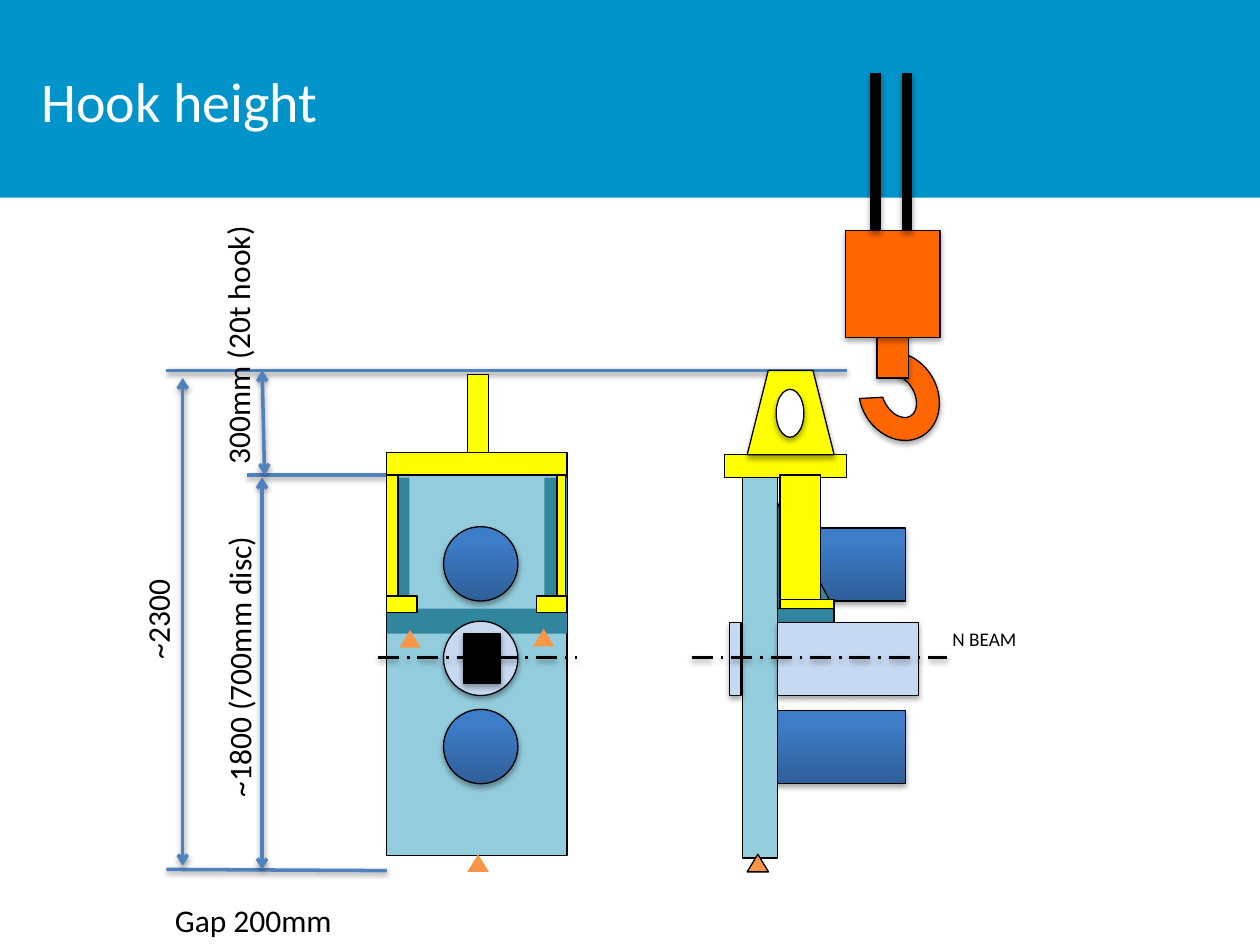
"""Build the hook height slide with front and side views of the lifting frame."""
from dataclasses import dataclass
from typing import Optional

from lxml import etree
from pptx import Presentation
from pptx import util as u
from pptx.dml.color import RGBColor
from pptx.enum import dml, shapes, text
from pptx.oxml.ns import qn

BLACK = RGBColor(0x00, 0x00, 0x00)
WHITE = RGBColor(0xFF, 0xFF, 0xFF)
BANNER = RGBColor(0x00, 0x94, 0xCA)
PLATE = RGBColor(0x93, 0xCD, 0xDD)
TEAL = RGBColor(0x31, 0x85, 0x9C)
YELLOW = RGBColor(0xFF, 0xFF, 0x00)
ORANGE = RGBColor(0xFF, 0x66, 0x00)
MARKER = RGBColor(0xF7, 0x96, 0x46)
PALE = RGBColor(0xC6, 0xD9, 0xF1)
MOTOR = RGBColor(0x3D, 0x7C, 0xC7)
MOTOR_DARK = RGBColor(0x2F, 0x5F, 0x99)
DIMENSION = RGBColor(0x4F, 0x81, 0xBD)
FONT = "Calibri"

KIND = shapes.MSO_SHAPE
RECT, OVAL, TRIANGLE = KIND.RECTANGLE, KIND.OVAL, KIND.ISOSCELES_TRIANGLE


@dataclass
class Part:
    left: float
    top: float
    width: float
    height: float
    fill: RGBColor
    kind: shapes.MSO_SHAPE = RECT
    outlined: bool = True
    shadow: bool = False
    rotation: float = 0
    adjustments: tuple = ()


@dataclass
class Stroke:
    x1: float
    y1: float
    x2: float
    y2: float
    color: RGBColor = DIMENSION
    weight: float = 2
    arrows: bool = False
    dash: Optional[dml.MSO_LINE] = None


@dataclass
class Label:
    words: str
    left: float
    top: float
    width: float
    height: float = 0.4
    size: float = 18
    rotation: float = 0


def inch(value: float) -> u.Length:
    return u.Cm(value * 2.54)


def add_shadow(effects, alpha: int, distance: int) -> None:
    outer = etree.SubElement(effects, qn("a:outerShdw"), blurRad="40000", dist=str(distance),
                             dir="5400000", rotWithShape="0")
    tint = etree.SubElement(outer, qn("a:srgbClr"), val=str(BLACK))
    etree.SubElement(tint, qn("a:alpha"), val=str(alpha * 1000))


def draw_part(page, part: Part):
    shape = page.shapes.add_shape(part.kind, inch(part.left), inch(part.top),
                                  inch(part.width), inch(part.height))
    shape.rotation = part.rotation
    for index, value in enumerate(part.adjustments):
        shape.adjustments[index] = value
    if part.fill == MOTOR:
        shape.fill.gradient()
        shape.fill.gradient_angle = 90
        stops = shape.fill.gradient_stops
        for stop, color, position in zip(stops, (MOTOR_DARK, MOTOR), (0, 0.8)):
            stop.color.rgb = color
            stop.position = position
    else:
        shape.fill.solid()
        shape.fill.fore_color.rgb = part.fill
    if part.outlined:
        shape.line.color.rgb = BLACK
        shape.line.width = u.Pt(0.75)
    else:
        shape.line.fill.background()
    shape.shadow.inherit = False
    if part.shadow:
        add_shadow(shape._element.spPr.find(qn("a:effectLst")), 35, 23000)
    return shape


def draw_stroke(page, stroke: Stroke) -> None:
    line = page.shapes.add_connector(shapes.MSO_CONNECTOR.STRAIGHT, inch(stroke.x1),
                                     inch(stroke.y1), inch(stroke.x2), inch(stroke.y2))
    line.line.color.rgb = stroke.color
    line.line.width = u.Pt(stroke.weight)
    if stroke.dash:
        line.line.dash_style = stroke.dash
    properties = line._element.spPr
    if stroke.arrows:
        for end in ("a:headEnd", "a:tailEnd"):
            etree.SubElement(properties.find(qn("a:ln")), qn(end), type="arrow")
    add_shadow(etree.SubElement(properties, qn("a:effectLst")), 38, 20000)


def write(para, words: str, size: float, color: RGBColor) -> None:
    span = para.add_run()
    span.text = words
    span.font.name = FONT
    span.font.size = u.Pt(size)
    span.font.color.rgb = color


def draw_label(page, label: Label) -> None:
    box = page.shapes.add_textbox(inch(label.left), inch(label.top),
                                  inch(label.width), inch(label.height))
    box.rotation = label.rotation
    box.text_frame.word_wrap = False
    box.text_frame.auto_size = text.MSO_AUTO_SIZE.SHAPE_TO_FIT_TEXT
    write(box.text_frame.paragraphs[0], label.words, label.size, BLACK)


def draw_title(page, words: str) -> None:
    title = page.shapes.title
    title.left, title.top, title.width, title.height = map(inch, (0.23, 0.17, 5.52, 1.25))
    title.text_frame.vertical_anchor = text.MSO_ANCHOR.MIDDLE
    para = title.text_frame.paragraphs[0]
    para.alignment = text.PP_ALIGN.LEFT
    write(para, words, 32, WHITE)


DIMENSIONS = [
    Stroke(3.07, 3.77, 1.96, 3.77),
    Stroke(3.07, 6.91, 1.32, 6.9),
    Stroke(6.72, 2.94, 1.32, 2.94),
    Stroke(2.08, 6.9, 2.08, 3.79, arrows=True),
    Stroke(1.45, 6.87, 1.45, 3, arrows=True),
    Stroke(2.1, 3.77, 2.08, 2.94, arrows=True),
]
FRONT_VIEW = [
    Part(3.07, 3.77, 1.43, 3.02, PLATE),
    *[Part(3.52, top, 0.59, 0.59, MOTOR, OVAL, shadow=True) for top in (4.18, 5.63)],
    Part(3.07, 4.83, 1.43, 0.2, TEAL, outlined=False),
    *[Part(left, 3.79, 0.18, 1.05, TEAL, outlined=False) for left in (3.07, 4.32)],
    *[Part(left, top, 0.17, 0.14, MARKER, TRIANGLE, outlined=False)
      for left, top in ((3.71, 6.78), (3.17, 5), (4.23, 4.99))],
    Part(3.07, 3.59, 1.43, 0.18, YELLOW),
    Part(4.42, 3.77, 0.07, 0.96, YELLOW),
    Part(3.07, 3.77, 0.09, 1, YELLOW),
    *[Part(left, 4.73, 0.24, 0.13, YELLOW) for left in (3.07, 4.26)],
    Part(3.71, 2.97, 0.17, 0.62, YELLOW),
    Part(3.52, 4.93, 0.59, 0.59, PALE, OVAL, shadow=True),
    Part(3.68, 5.03, 0.29, 0.39, BLACK, shadow=True),
]
SIDE_VIEW = [
    *[Part(6.16, top, 1.03, 0.58, MOTOR, shadow=True) for top in (5.64, 4.19)],
    Part(5.89, 3.79, 0.28, 3.02, PLATE),
    Part(6.17, 4.83, 0.45, 0.2, TEAL),
    Part(6.17, 3.99, 0.45, 0.84, TEAL, KIND.RIGHT_TRIANGLE),
    Part(5.93, 6.78, 0.17, 0.14, MARKER, TRIANGLE),
    Part(5.75, 3.61, 0.97, 0.18, YELLOW),
    Part(6.19, 3.77, 0.32, 0.99, YELLOW),
    Part(6.19, 4.76, 0.43, 0.07, YELLOW),
    Part(5.93, 2.94, 0.69, 0.67, YELLOW, KIND.TRAPEZOID, shadow=True),
    Part(6.16, 3.09, 0.22, 0.38, WHITE, OVAL, shadow=True),
    *[Part(left, 4.94, width, 0.58, PALE, shadow=True)
      for left, width in ((5.79, 0.09), (6.17, 1.12))],
]
CRANE_HOOK = [
    Part(6.83, 2.78, 0.61, 0.73, ORANGE, KIND.BLOCK_ARC, shadow=True, rotation=150,
         adjustments=(70.4, 16.05, 0.3)),
    Part(6.96, 2.35, 0.25, 0.65, ORANGE, shadow=True),
    Part(6.71, 1.83, 0.75, 0.85, ORANGE, shadow=True),
]
ROPES = [Stroke(x, 1.83, x, 0.58, BLACK, 6) for x in (7.2, 6.95)]
BEAM_AXES = [Stroke(start, 5.22, end, 5.22, BLACK, 1.5, dash=dml.MSO_LINE.LONG_DASH_DOT)
             for start, end in ((5.49, 7.52), (3, 4.58))]
LABELS = [
    Label("~1800 (700mm disc)", 0.75, 5.08, 2.29, rotation=270),
    Label("300mm (20t hook)", 0.83, 2.53, 2.11, rotation=270),
    Label("~2300", 0.83, 4.71, 0.84, rotation=270),
    Label("N BEAM", 7.46, 4.93, 0.72, 0.29, 11),
    Label("Gap 200mm", 1.29, 7.1, 1.46),
]


def main() -> None:
    deck = Presentation()
    deck.slide_width, deck.slide_height = inch(10), inch(7.5)
    page = deck.slides.add_slide(deck.slide_layouts[5])
    banner = draw_part(page, Part(0, 0, 10, 1.57, BANNER, outlined=False))
    page.shapes.title._element.addprevious(banner._element)
    draw_title(page, "Hook height")
    for stroke in DIMENSIONS:
        draw_stroke(page, stroke)
    for part in FRONT_VIEW + SIDE_VIEW + CRANE_HOOK:
        draw_part(page, part)
    for stroke in ROPES + BEAM_AXES:
        draw_stroke(page, stroke)
    for label in LABELS:
        draw_label(page, label)
    deck.save("out.pptx")


if __name__ == "__main__":
    main()
